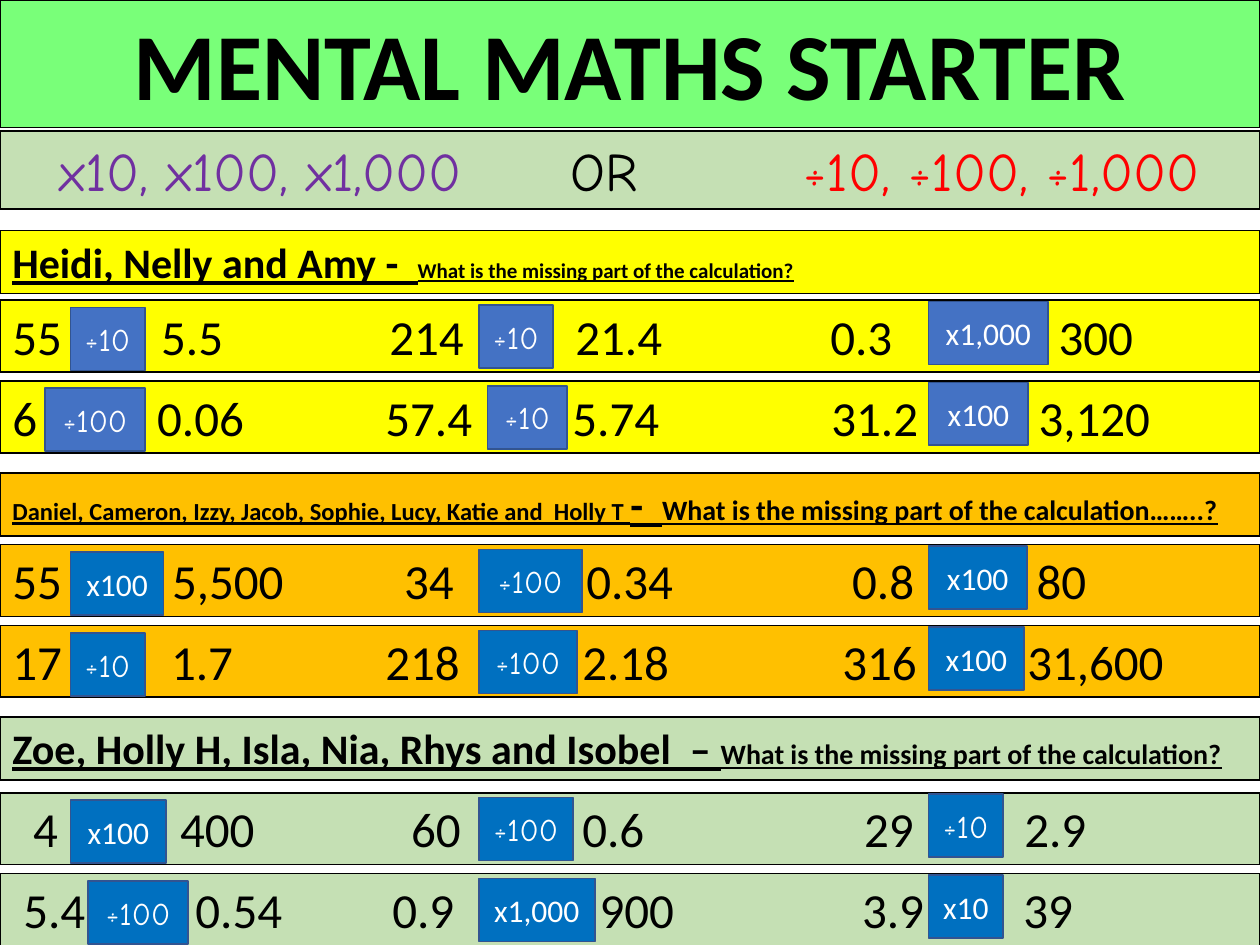
from lxml import etree
from pptx import Presentation
from pptx import util as u
from pptx.dml.color import RGBColor
from pptx.enum import shapes, text
from pptx.oxml.ns import qn

COLORS = {
    "black": "000000", "white": "FFFFFF", "purple": "7030A0", "red": "FF0000",
    "lime": "79FF79", "sage": "C5E0B4", "yellow": "FFFF00", "amber": "FFC000",
    "periwinkle": "4472C4", "blue": "0070C0", "navy": "325491",
}
PAGE_WIDTH, PAGE_HEIGHT = 25.4, 19.05
INSET = 0.25
HEADING_HEIGHT, ROW_HEIGHT, ANSWER_HEIGHT = 1.27, 1.45, 1.27
ROW_PITCH = 1.63
ANSWER_DROPS = (0.15, 0.1, 0.03)
QUESTION = "What is the missing part of the calculation?"

SECTIONS = [
    dict(top=4.65, row_gap=1.4, fill="yellow", answer_fill="periwinkle",
         heading=[("Heidi, Nelly and Amy -  ", 24), (QUESTION, 12)],
         rows=[
             dict(numbers=["55", "5.5", "214", "21.4", "0.3", "300"],
                  stops=[0.25, 3.25, 7.85, 11.6, 16.74, 21.34],
                  answers=[("÷10", 1.42, 1.5), ("÷10", 9.65, 1.5), ("x1,000", 18.72, 2.41)]),
             dict(numbers=["6", "0.06", "57.4", "5.74", "31.2", "3,120"],
                  stops=[0.25, 3.17, 7.77, 11.54, 16.76, 20.94],
                  answers=[("÷100", 0.91, 2.01), ("÷10", 9.83, 1.6), ("x100", 18.72, 2.01)]),
         ]),
    dict(top=9.53, row_gap=1.45, fill="amber", answer_fill="blue",
         heading=[("Daniel, Cameron, Izzy, Jacob, Sophie, Lucy, Katie and  Holly T ", 14),
                  ("-  ", 24), ("What is the missing part of the calculation……..?", 16)],
         rows=[
             dict(numbers=["55", "5,500", "34", "0.34", "0.8", "80"],
                  stops=[0.25, 3.47, 8.15, 11.82, 17.18, 20.9],
                  answers=[("x100", 1.42, 1.88), ("÷100", 9.65, 2.08), ("x100", 18.72, 1.98)]),
             dict(numbers=["17", "1.7", "218", "2.18", "316", "31,600"],
                  stops=[0.25, 3.45, 7.77, 11.74, 16.98, 20.71],
                  answers=[("÷10", 1.42, 1.5), ("÷100", 9.65, 1.98), ("x100", 18.72, 1.93)]),
         ]),
    dict(top=14.45, row_gap=1.53, fill="sage", answer_fill="blue",
         heading=[("Zoe, Holly H, Isla, Nia, Rhys and Isobel  – ", 24), (QUESTION, 16)],
         rows=[
             dict(numbers=["4", "400", "60", "0.6", "29", "2.9"],
                  stops=[0.67, 3.63, 8.29, 11.74, 17.42, 20.65],
                  answers=[("x100", 1.42, 1.93), ("÷100", 9.65, 1.9), ("÷10", 18.72, 1.5)]),
             dict(numbers=["5.4", "0.54", "0.9", "900", "3.9", "39"],
                  stops=[0.47, 3.94, 7.91, 12.09, 17.38, 20.63],
                  answers=[("÷100", 1.78, 2.01), ("x1,000", 9.65, 2.34), ("x10", 18.72, 1.5)]),
         ]),
]


def color(name):
    return RGBColor.from_string(COLORS[name])


def write(paragraph, words, size, font="Calibri", ink="black", bold=False, underline=False):
    run = paragraph.add_run()
    run.text = words
    run.font.size = u.Pt(size)
    run.font.name = font
    run.font.bold = bold
    run.font.underline = underline
    run.font.color.rgb = color(ink)


def style_panel(panel, fill, line="black", anchor=text.MSO_ANCHOR.TOP,
                align=text.PP_ALIGN.LEFT, left_inset=INSET):
    panel.fill.solid()
    panel.fill.fore_color.rgb = color(fill)
    panel.line.color.rgb = color(line)
    panel.line.width = u.Pt(1)
    frame = panel.text_frame
    frame.word_wrap = True
    frame.auto_size = text.MSO_AUTO_SIZE.NONE
    frame.vertical_anchor = anchor
    frame.margin_left = u.Cm(left_inset)
    paragraph = frame.paragraphs[0]
    paragraph.alignment = align
    return paragraph


def add_panel(slide, left, top, width, height, fill, **style):
    panel = slide.shapes.add_shape(shapes.MSO_SHAPE.RECTANGLE,
                                   u.Cm(left), u.Cm(top), u.Cm(width), u.Cm(height))
    panel.shadow.inherit = False
    return style_panel(panel, fill, **style)


def set_tab_stops(paragraph, stops):
    tabs = etree.SubElement(paragraph._p.get_or_add_pPr(), qn("a:tabLst"))
    for stop in stops:
        etree.SubElement(tabs, qn("a:tab"), pos=str(u.Cm(stop)), algn="l")


def add_tabbed_panel(slide, top, height, fill, stops):
    start = stops[0]
    paragraph = add_panel(slide, 0, top, PAGE_WIDTH, height, fill, left_inset=start)
    set_tab_stops(paragraph, [stop - start for stop in stops[1:]])
    return paragraph


def place_title(slide, top, height):
    title = slide.shapes.title
    title.left, title.top = u.Cm(0), u.Cm(top)
    title.width, title.height = u.Cm(PAGE_WIDTH), u.Cm(height)
    paragraph = style_panel(title, "lime", align=text.PP_ALIGN.CENTER)
    write(paragraph, "MENTAL MATHS STARTER", 54, bold=True)


def place_operations(slide, top, height):
    paragraph = add_tabbed_panel(slide, top, height, "sage", [1.2, 11.5, 16.2])
    for words, ink in (("x10, x100, x1,000\t", "purple"), ("OR\t", "black"),
                       ("÷10, ÷100, ÷1,000", "red")):
        write(paragraph, words, 31, font="Comic Neue", ink=ink)


def place_row(slide, top, fill, answer_fill, numbers, stops, answers):
    paragraph = add_tabbed_panel(slide, top, ROW_HEIGHT, fill, stops)
    write(paragraph, "\t".join(numbers), 28)
    for (operation, left, width), drop in zip(answers, ANSWER_DROPS):
        answer = add_panel(slide, left, top + drop, width, ANSWER_HEIGHT, answer_fill,
                           line="navy", anchor=text.MSO_ANCHOR.MIDDLE,
                           align=text.PP_ALIGN.CENTER)
        font = "Comic Neue" if operation.startswith("÷") else "Calibri"
        write(answer, operation, 18, font=font, ink="white")


def place_section(slide, top, row_gap, fill, answer_fill, heading, rows):
    paragraph = add_panel(slide, 0, top, PAGE_WIDTH, HEADING_HEIGHT, fill)
    for words, size in heading:
        write(paragraph, words, size, bold=True, underline=True)
    for index, row in enumerate(rows):
        place_row(slide, top + row_gap + index * ROW_PITCH, fill, answer_fill, **row)


def main():
    deck = Presentation()
    deck.slide_width, deck.slide_height = u.Cm(PAGE_WIDTH), u.Cm(PAGE_HEIGHT)
    slide = deck.slides.add_slide(deck.slide_layouts[5])
    place_title(slide, 0, 2.57)
    place_operations(slide, 2.64, 1.57)
    for section in SECTIONS:
        place_section(slide, **section)
    deck.save("out.pptx")


if __name__ == "__main__":
    main()
